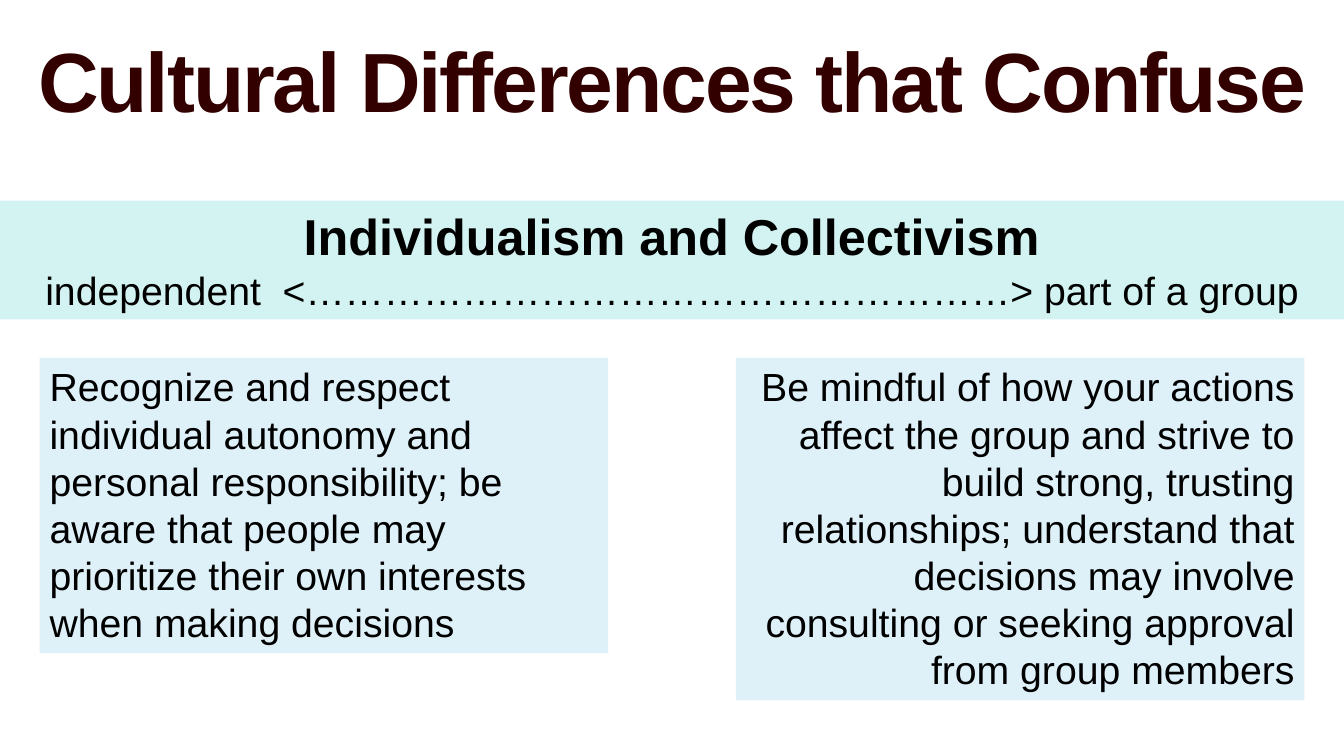
"""Build the slide on individualism and collectivism."""
from dataclasses import dataclass

from pptx import Presentation
from pptx.dml.color import RGBColor
from pptx.enum.shapes import MSO_SHAPE as Preset
from pptx.enum.text import MSO_ANCHOR as Anchor, MSO_AUTO_SIZE as AutoSize, PP_ALIGN as Align
from pptx.shapes.base import BaseShape
from pptx.slide import Slide
from pptx.util import Inches, Pt

WIDTH, HEIGHT = Inches(13.33), Inches(7.5)
COLORS = {"heading": "330000", "text": "000000", "band": "D2F3F1", "advice": "DEF0F8"}
MARGIN, ADVICE_WIDTH, ADVICE_TOP = 2.95, 42.3, 47.33


@dataclass(frozen=True)
class Line:
    """One paragraph and its look."""
    text: str
    size: int = 28
    bold: bool = False
    color: str = "text"


@dataclass(frozen=True)
class Panel:
    """A filled block of text, placed in percent of the slide."""
    left: float
    top: float
    width: float
    height: float
    fill: str
    align: Align
    lines: tuple[Line, ...]


HEADING = Line("Cultural Differences that Confuse", 60, True, "heading")
PANELS = (
    Panel(0, 26.53, 100, 15.73, "band", Align.CENTER, (
        Line("Individualism and Collectivism", 36, True),
        Line("independent  <" + "…" * 18 + "> part of a group"),
    )),
    Panel(100 - MARGIN - ADVICE_WIDTH, ADVICE_TOP, ADVICE_WIDTH, 45.33, "advice", Align.RIGHT, (
        Line("Be mindful of how your actions affect the group and strive to build strong, "
             "trusting relationships; understand that decisions may involve consulting "
             "or seeking approval from group members"),
    )),
    Panel(MARGIN, ADVICE_TOP, ADVICE_WIDTH, 39.07, "advice", Align.LEFT, (
        Line("Recognize and respect individual autonomy and personal responsibility; "
             "be aware that people may prioritize their own interests when making decisions"),
    )),
)


def frame(left: float, top: float, width: float, height: float) -> tuple[int, int, int, int]:
    """Turn percentages of the slide into lengths."""
    return (round(WIDTH * left / 100), round(HEIGHT * top / 100),
            round(WIDTH * width / 100), round(HEIGHT * height / 100))


def write(shape: BaseShape, lines: tuple[Line, ...], align: Align) -> None:
    """Fill a shape with formatted paragraphs."""
    body = shape.text_frame
    body.text = "\n".join(line.text for line in lines)
    body.word_wrap = True
    body.auto_size = AutoSize.SHAPE_TO_FIT_TEXT
    body.vertical_anchor = Anchor.TOP
    for paragraph, line in zip(body.paragraphs, lines):
        paragraph.alignment = align
        font = paragraph.font
        font.name, font.size, font.bold = "Arial", Pt(line.size), line.bold
        font.color.rgb = RGBColor.from_string(COLORS[line.color])


def add_heading(slide: Slide) -> None:
    """Place the title across the slide with tightened letters."""
    heading = slide.shapes.title
    heading.left, heading.top, heading.width, heading.height = frame(0, 3.07, 100, 14.8)
    write(heading, (HEADING,), Align.CENTER)
    heading.text_frame.paragraphs[0].runs[0]._r.get_or_add_rPr().set("spc", "-150")


def add_panel(slide: Slide, panel: Panel) -> None:
    """Draw one filled block of text."""
    block = slide.shapes.add_shape(
        Preset.RECTANGLE, *frame(panel.left, panel.top, panel.width, panel.height))
    block.shadow.inherit = False
    block.fill.solid()
    block.fill.fore_color.rgb = RGBColor.from_string(COLORS[panel.fill])
    block.line.fill.background()
    write(block, panel.lines, panel.align)


def main() -> None:
    """Assemble and save the presentation."""
    deck = Presentation()
    deck.slide_width, deck.slide_height = WIDTH, HEIGHT
    slide = deck.slides.add_slide(deck.slide_layouts[5])
    add_heading(slide)
    for panel in PANELS:
        add_panel(slide, panel)
    deck.save("out.pptx")


if __name__ == "__main__":
    main()
